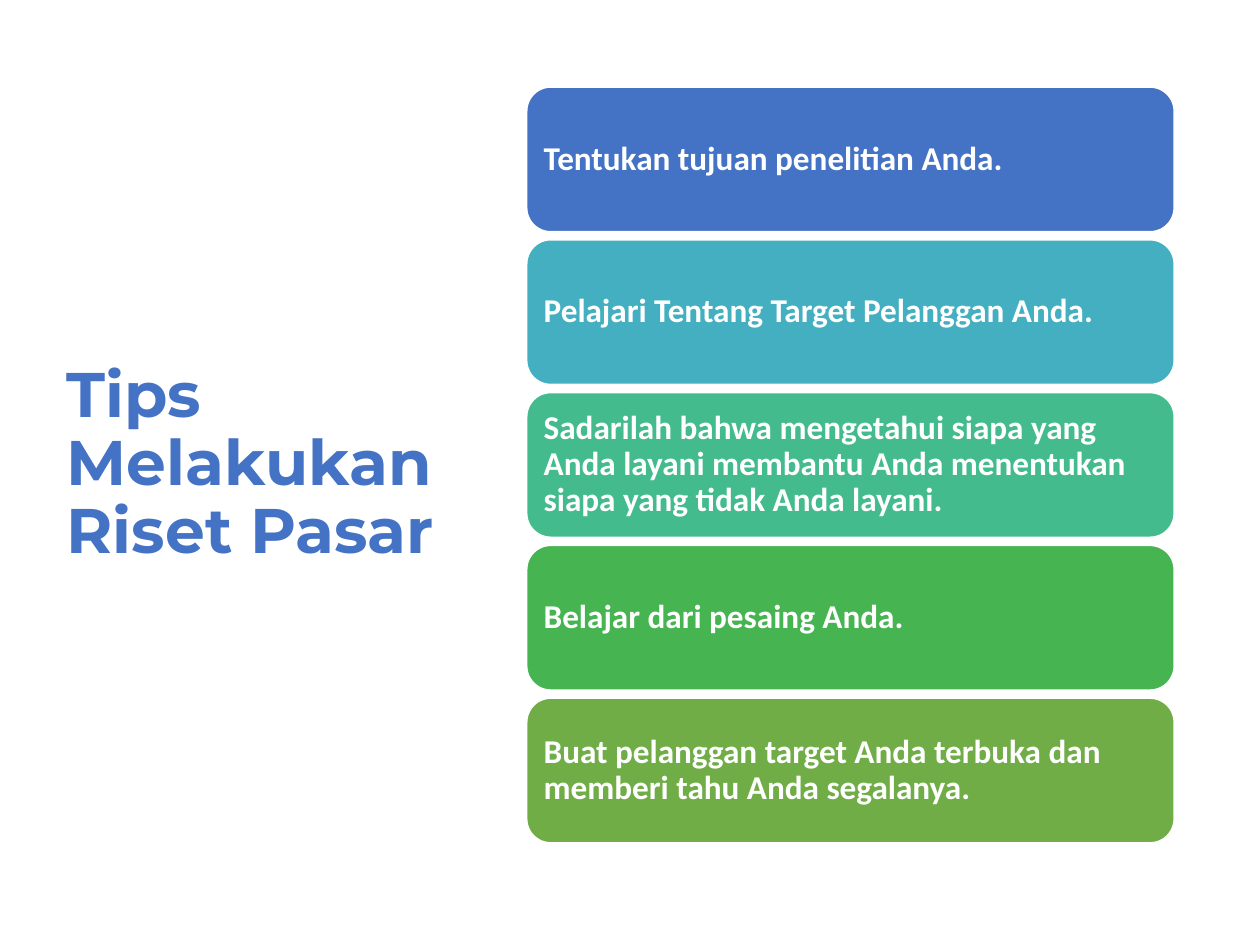
"""Build the slide of market research tips as a title beside a stack of cards."""
from dataclasses import dataclass

from pptx import Presentation
from pptx.dml.color import RGBColor
from pptx.enum import shapes, text
from pptx.util import Inches, Pt


@dataclass(frozen=True)
class TextStyle:
    font: str
    size: float
    color: str


@dataclass(frozen=True)
class Theme:
    title: TextStyle = TextStyle("Montserrat", 36, "4472C4")
    card: TextStyle = TextStyle("Calibri", 19, "FFFFFF")
    outline: str = "FFFFFF"
    line_spacing: float = 0.9


@dataclass(frozen=True)
class Tip:
    wording: str
    fill: str


@dataclass(frozen=True)
class Stack:
    left: float = 4.18
    top: float = 0.69
    width: float = 5.14
    height: float = 6.0
    card_height: float = 1.15
    inset: float = 0.08

    def card_top(self, index: int, count: int) -> float:
        return self.top + index * (self.height - self.card_height) / (count - 1)


THEME = Theme()
STACK = Stack()
TIPS = (
    Tip("Tentukan tujuan penelitian Anda.", "4472C4"),
    Tip("Pelajari Tentang Target Pelanggan Anda.", "43AFC0"),
    Tip("Sadarilah bahwa mengetahui siapa yang Anda layani membantu Anda "
        "menentukan siapa yang tidak Anda layani.", "43BB8D"),
    Tip("Belajar dari pesaing Anda.", "45B451"),
    Tip("Buat pelanggan target Anda terbuka dan memberi tahu Anda segalanya.",
        "70AD47"),
)


def write_text(shape, wording: str, style: TextStyle) -> None:
    frame = shape.text_frame
    frame.text = wording
    frame.word_wrap = True
    frame.vertical_anchor = text.MSO_ANCHOR.MIDDLE
    para = frame.paragraphs[0]
    para.alignment = text.PP_ALIGN.LEFT
    para.line_spacing = THEME.line_spacing
    font = para.runs[0].font
    font.name, font.size, font.bold = style.font, Pt(style.size), True
    font.color.rgb = RGBColor.from_string(style.color)


def add_title(page, wording: str) -> None:
    box = page.shapes.add_textbox(
        Inches(0.43), Inches(0.68), Inches(3.12), Inches(6.02))
    write_text(box, wording, THEME.title)


def add_card(page, tip: Tip, top: float) -> None:
    card = page.shapes.add_shape(
        shapes.MSO_SHAPE.ROUNDED_RECTANGLE, Inches(STACK.left), Inches(top),
        Inches(STACK.width), Inches(STACK.card_height))
    card.shadow.inherit = False
    card.fill.solid()
    card.fill.fore_color.rgb = RGBColor.from_string(tip.fill)
    card.line.color.rgb = RGBColor.from_string(THEME.outline)
    card.line.width = Pt(1)
    frame = card.text_frame
    frame.margin_left = frame.margin_right = Inches(STACK.inset)
    frame.margin_top = frame.margin_bottom = Inches(STACK.inset)
    write_text(card, tip.wording, THEME.card)


def main() -> None:
    deck = Presentation()
    deck.slide_width, deck.slide_height = Inches(10), Inches(7.5)
    page = deck.slides.add_slide(deck.slide_layouts[6])
    add_title(page, "Tips Melakukan Riset Pasar")
    for index, tip in enumerate(TIPS):
        add_card(page, tip, STACK.card_top(index, len(TIPS)))
    deck.save("out.pptx")


if __name__ == "__main__":
    main()
